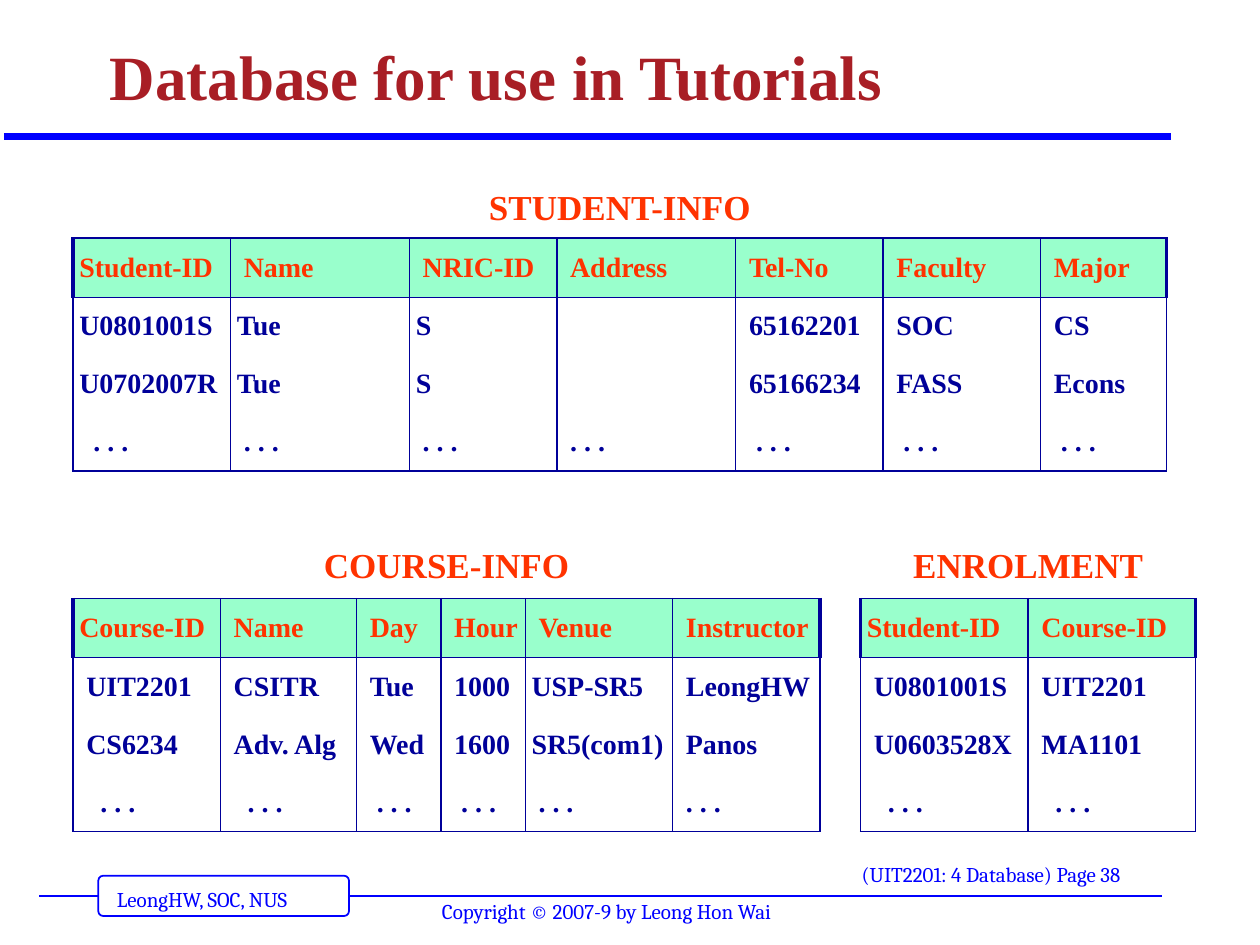
from dataclasses import dataclass

from lxml.etree import SubElement
from pptx import Presentation
from pptx.dml.color import RGBColor
from pptx.enum.shapes import MSO_CONNECTOR, MSO_SHAPE
from pptx.enum.text import MSO_ANCHOR, MSO_AUTO_SIZE, PP_ALIGN
from pptx.oxml.ns import qn
from pptx.util import Inches, Pt

SERIF, FOOTER_FONT = "Times New Roman", "Cambria"
BLUE, NAVY, RED, ORANGE = "0000FF", "000099", "A81E25", "FF3300"
MINT, WHITE = "99FFCC", "FFFFFF"
ELLIPSIS = ". . ."
HEADING_HEIGHT, RECORD_HEIGHT = 0.47, 0.46
INDENT_STEP = Pt(4)


@dataclass
class Column:
    """One field; indents holds the steps for heading, records and ellipsis."""
    heading: str
    width: float
    records: tuple[str, str]
    indents: tuple[int, int, int]


@dataclass
class Relation:
    name: str
    left: float
    top: float
    name_height: float
    columns: list[Column]


@dataclass
class Rule:
    left: float
    right: float
    y: float
    weight: float


@dataclass
class FooterNote:
    text: str
    left: float
    top: float
    width: float


RELATIONS = [
    Relation("STUDENT-INFO", 0.58, 1.42, 0.47, [
        Column("Student-ID", 1.25, ("U0801001S", "U0702007R"), (0, 0, 2)),
        Column("Name", 1.42, ("Tue", "Tue"), (1, 0, 1)),
        Column("NRIC-ID", 1.17, ("S", "S"), (1, 0, 1)),
        Column("Address", 1.42, ("", ""), (1, 0, 1)),
        Column("Tel-No", 1.17, ("65162201", "65166234"), (1, 1, 2)),
        Column("Faculty", 1.25, ("SOC", "FASS"), (1, 1, 2)),
        Column("Major", 1, ("CS", "Econs"), (1, 1, 2)),
    ]),
    Relation("COURSE-INFO", 0.58, 4.25, 0.5, [
        Column("Course-ID", 1.17, ("UIT2201", "CS6234"), (0, 1, 3)),
        Column("Name", 1.08, ("CSITR", "Adv. Alg"), (1, 1, 3)),
        Column("Day", 0.67, ("Tue", "Wed"), (1, 1, 2)),
        Column("Hour", 0.67, ("1000", "1600"), (1, 1, 2)),
        Column("Venue", 1.17, ("USP-SR5", "SR5(com1)"), (1, 0, 1)),
        Column("Instructor", 1.17, ("LeongHW", "Panos"), (1, 1, 1)),
    ]),
    Relation("ENROLMENT", 6.83, 4.25, 0.5, [
        Column("Student-ID", 1.33, ("U0801001S", "U0603528X"), (0, 1, 3)),
        Column("Course-ID", 1.33, ("UIT2201", "MA1101"), (1, 1, 3)),
    ]),
]
FOOTER_RULE = Rule(0.31, 9.22, 7.11, 1)
TITLE_RULE = Rule(0.03, 9.29, 1.08, 4)
FOOTER_NOTES = [
    FooterNote("LeongHW, SOC, NUS", 0.83, 6.99, 1.82),
    FooterNote("(UIT2201: 4 Database) Page 38", 6.74, 6.79, 2.49),
    FooterNote("Copyright © 2007-9 by Leong Hon Wai", 3.41, 7.08, 3.07),
]


def rgb(value: str) -> RGBColor:
    return RGBColor.from_string(value)


def style_text(paragraph, font: str, size: float, color: str, bold: bool = False) -> None:
    for run in paragraph.runs:
        run.font.name = font
        run.font.size = Pt(size)
        run.font.bold = bold
        run.font.color.rgb = rgb(color)


def draw_rule(slide, rule: Rule) -> None:
    y = Inches(rule.y)
    line = slide.shapes.add_connector(
        MSO_CONNECTOR.STRAIGHT, Inches(rule.left), y, Inches(rule.right), y)
    line.line.color.rgb = rgb(BLUE)
    line.line.width = Pt(rule.weight)
    SubElement(line._element.spPr, qn("a:effectLst"))


def draw_author_frame(slide) -> None:
    frame = slide.shapes.add_shape(
        MSO_SHAPE.ROUNDED_RECTANGLE, Inches(0.78), Inches(6.95), Inches(1.99), Inches(0.32))
    frame.adjustments[0] = 0.125
    frame.shadow.inherit = False
    frame.fill.solid()
    frame.fill.fore_color.rgb = rgb(WHITE)
    frame.line.color.rgb = rgb(BLUE)
    frame.line.width = Pt(1)


def draw_footer_note(slide, note: FooterNote) -> None:
    box = slide.shapes.add_textbox(
        Inches(note.left), Inches(note.top), Inches(note.width), Inches(0.3))
    box.text_frame.word_wrap = False
    box.text_frame.text = note.text
    style_text(box.text_frame.paragraphs[0], FOOTER_FONT, 12, BLUE)


def set_borders(cell, **weights: float) -> None:
    """Line the sides given as L, R, T and B, in that order; 0 hides one."""
    properties = cell._tc.get_or_add_tcPr()
    for position, (side, weight) in enumerate(weights.items()):
        border = properties.makeelement(qn(f"a:ln{side}"), {"w": str(Pt(weight))})
        properties.insert(position, border)
        if weight:
            fill = SubElement(border, qn("a:solidFill"))
            SubElement(fill, qn("a:srgbClr"), val=NAVY)
        else:
            SubElement(border, qn("a:noFill"))


def fill_cell(cell, text: str, color: str, size: float = 16, indent: int = 0) -> None:
    cell.vertical_anchor = MSO_ANCHOR.MIDDLE
    cell.margin_left = Inches(0.05) + indent * INDENT_STEP
    cell.margin_right = cell.margin_top = cell.margin_bottom = Inches(0.05)
    cell.fill.background()
    cell.text_frame.text = text
    paragraph = cell.text_frame.paragraphs[0]
    paragraph.space_before = Pt(size / 2)
    style_text(paragraph, SERIF, size, color, bold=True)


def draw_relation(slide, relation: Relation) -> None:
    columns = relation.columns
    heights = [relation.name_height, HEADING_HEIGHT] + [RECORD_HEIGHT] * 3
    table = slide.shapes.add_table(
        len(heights), len(columns), Inches(relation.left), Inches(relation.top),
        Inches(sum(column.width for column in columns)), Inches(sum(heights))).table
    table.first_row = table.horz_banding = False
    for row, height in zip(table.rows, heights):
        row.height = Inches(height)

    name_cell = table.cell(0, 0)
    name_cell.merge(table.cell(0, len(columns) - 1))
    fill_cell(name_cell, relation.name, ORANGE, size=20)
    name_cell.text_frame.paragraphs[0].alignment = PP_ALIGN.CENTER

    last = len(columns) - 1
    for index, column in enumerate(columns):
        table.columns[index].width = Inches(column.width)
        set_borders(table.cell(0, index), L=0, R=0, T=0, B=1)
        heading_indent, record_indent, ellipsis_indent = column.indents

        heading = table.cell(1, index)
        fill_cell(heading, column.heading, ORANGE, indent=heading_indent)
        heading.fill.solid()
        heading.fill.fore_color.rgb = rgb(MINT)
        set_borders(heading, L=2.25 if index == 0 else 1,
                    R=2.25 if index == last else 1, T=1, B=1)

        for row, record in enumerate(column.records, start=2):
            fill_cell(table.cell(row, index), record, NAVY, indent=record_indent)
            set_borders(table.cell(row, index), L=1, R=1, T=1 if row == 2 else 0, B=0)
        fill_cell(table.cell(4, index), ELLIPSIS, NAVY, indent=ellipsis_indent)
        set_borders(table.cell(4, index), L=1, R=1, T=0, B=1)


def format_title(title) -> None:
    title.left, title.top = Inches(0.77), Inches(0.08)
    title.width, title.height = Inches(8.5), Inches(0.88)
    frame = title.text_frame
    frame.text = "Database for use in Tutorials"
    frame.auto_size = MSO_AUTO_SIZE.NONE
    frame.vertical_anchor = MSO_ANCHOR.BOTTOM
    paragraph = frame.paragraphs[0]
    paragraph.alignment = PP_ALIGN.LEFT
    paragraph.line_spacing = 0.9
    style_text(paragraph, SERIF, 36, RED, bold=True)


def main() -> None:
    deck = Presentation()
    deck.slide_width, deck.slide_height = Inches(10), Inches(7.5)
    slide = deck.slides.add_slide(deck.slide_layouts[5])
    format_title(slide.shapes.title)
    draw_rule(slide, FOOTER_RULE)
    draw_author_frame(slide)
    draw_rule(slide, TITLE_RULE)
    for note in FOOTER_NOTES:
        draw_footer_note(slide, note)
    for relation in RELATIONS:
        draw_relation(slide, relation)
    deck.save("out.pptx")


if __name__ == "__main__":
    main()
